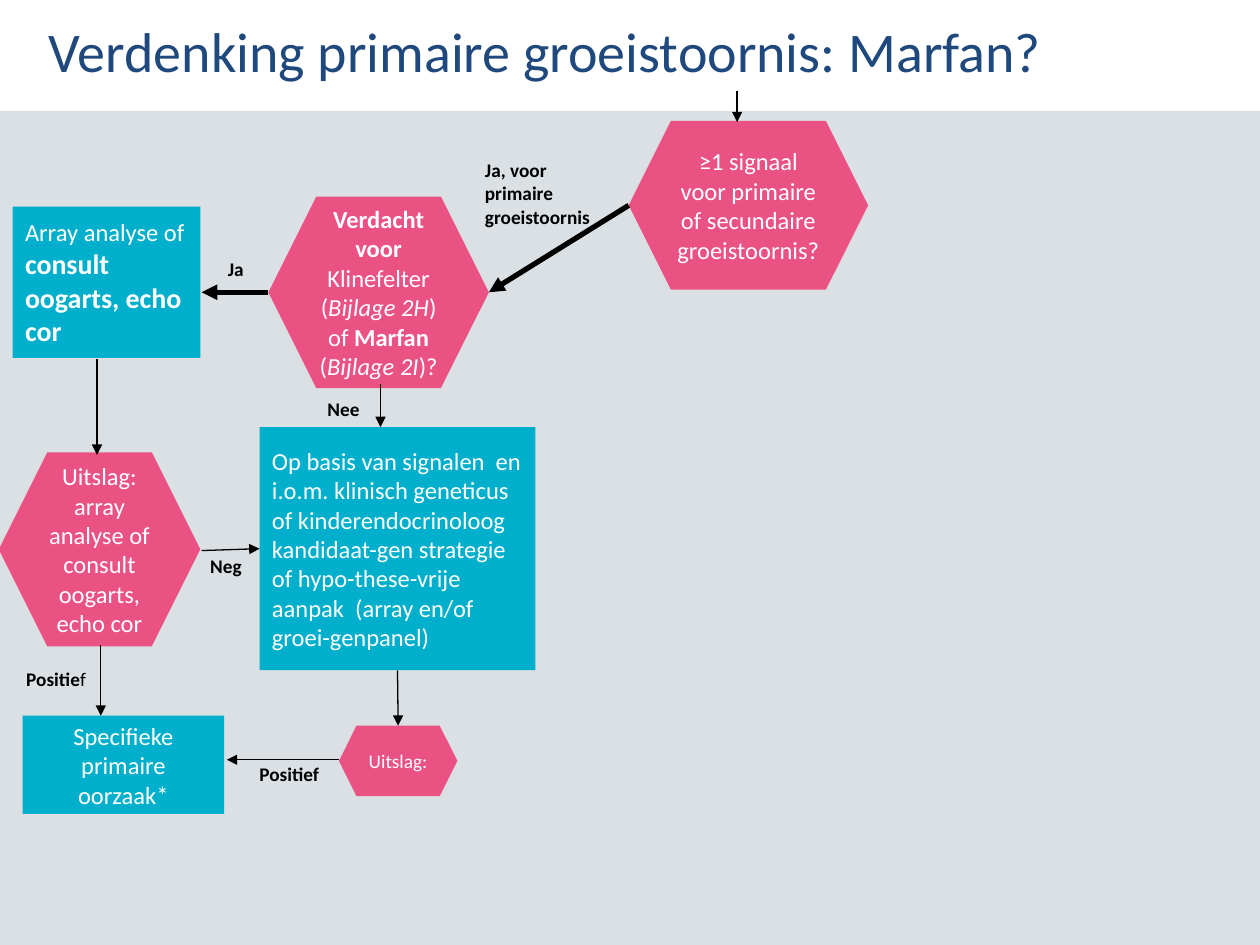
from lxml import etree
from pptx import Presentation
from pptx import util as u
from pptx.dml.color import RGBColor
from pptx.enum import shapes, text
from pptx.oxml.ns import qn

RECT = shapes.MSO_SHAPE.RECTANGLE
ROUND = shapes.MSO_SHAPE.ROUNDED_RECTANGLE
HEX = shapes.MSO_SHAPE.HEXAGON
LEFT, BOTTOM = 1, 2
PINK, CYAN, GREY = "EB5284", "00AFCB", "DAE0E3"
WHITE, BLACK, NAVY = "FFFFFF", "000000", "1F497D"


def rgb(value):
    return RGBColor.from_string(value)


class Flowchart:
    font = "Calibri"
    columns, rows = 100, 75

    def __init__(self, prs):
        self.cell_w = prs.slide_width / self.columns
        self.cell_h = prs.slide_height / self.rows
        self.s = prs.slides.add_slide(prs.slide_layouts[6])

    def place(self, *lengths):
        cells = (self.cell_w, self.cell_h) * 2
        return [u.Emu(round(n * cell)) for n, cell in zip(lengths, cells)]

    def set_text(self, sp, runs, size, color, bold=False, align=text.PP_ALIGN.LEFT):
        p = sp.text_frame.paragraphs[0]
        p.alignment = align
        p.font.name, p.font.size, p.font.bold = self.font, u.Pt(size), bold
        p.font.color.rgb = rgb(color)
        for content, style in [(runs, {})] if isinstance(runs, str) else runs:
            r = p.add_run()
            r.text = content
            r.font.bold = style.get("bold")
            r.font.italic = style.get("italic")
            r.font.size = style.get("size")

    def block(self, kind, at, fill, runs="", size=14, centred=True):
        sp = self.s.shapes.add_shape(kind, *self.place(*at))
        sp.shadow.inherit = False
        sp.fill.solid()
        sp.fill.fore_color.rgb = rgb(fill)
        sp.line.fill.background()
        if runs:
            align = text.PP_ALIGN.CENTER if centred else text.PP_ALIGN.LEFT
            sp.text_frame.vertical_anchor = text.MSO_ANCHOR.MIDDLE
            self.set_text(sp, runs, size, WHITE, align=align)
        return sp

    def label(self, at, runs, size=11, color=BLACK, bold=True, wrap=False):
        sp = self.s.shapes.add_textbox(*self.place(*at))
        sp.text_frame.word_wrap = wrap
        sp.text_frame.auto_size = text.MSO_AUTO_SIZE.SHAPE_TO_FIT_TEXT
        self.set_text(sp, runs, size, color, bold)

    def arrow(self, start, end, width=0.75, source=None, target=None):
        sp = self.s.shapes.add_connector(
            shapes.MSO_CONNECTOR.STRAIGHT, *self.place(*start, *end))
        sp.line.color.rgb = rgb(BLACK)
        sp.line.width = u.Pt(width)
        props = sp.element.find(qn("p:spPr"))
        etree.SubElement(props.find(qn("a:ln")), qn("a:tailEnd"), type="triangle")
        etree.SubElement(props, qn("a:effectLst"))
        if source:
            sp.begin_connect(*source)
        if target:
            sp.end_connect(*target)


def main():
    prs = Presentation()
    prs.slide_width, prs.slide_height = u.Inches(10), u.Inches(7.5)
    chart = Flowchart(prs)

    chart.block(RECT, (0, 8.8, 100, 66.2), GREY)
    chart.block(HEX, (49.9, 9.6, 19, 13.4), PINK,
                "≥1 signaal voor primaire of secundaire groeistoornis?")
    chart.block(HEX, (21.3, 15.6, 17.5, 15.2), PINK, [
        ("Verdacht voor ", {"bold": True}), ("Klinefelter (", {}),
        ("Bijlage 2H", {"italic": True}), (") of ", {}),
        ("Marfan ", {"bold": True}), ("(", {}),
        ("Bijlage 2I", {"italic": True}), (")?", {})])
    strategy = chart.block(
        RECT, (20.6, 33.9, 21.9, 19.3), CYAN,
        "Op basis van signalen  en i.o.m. klinisch geneticus of "
        "kinderendocrinoloog kandidaat-gen strategie of hypo-these-vrije "
        "aanpak  (array en/of groei-genpanel)", centred=False)
    array = chart.block(ROUND, (1, 16.4, 14.9, 12), CYAN, [
        ("Array analyse of ", {}),
        ("consult oogarts, echo cor", {"bold": True, "size": u.Pt(16)})], centred=False)
    array.adjustments[0] = 0
    chart.block(RECT, (1.8, 56.8, 16, 7.8), CYAN, "Specifieke primaire oorzaak*")
    chart.block(HEX, (-0.1, 35.9, 16, 15.4), PINK,
                "Uitslag: array analyse of consult oogarts, echo cor")
    chart.block(HEX, (26.9, 57.6, 9.4, 5.6), PINK, "Uitslag:", size=11)

    chart.arrow((58.5, 7.2), (58.5, 9.7))
    chart.arrow((49.9, 16.3), (38.8, 23.2), width=3)
    chart.arrow((21.3, 23.2), (16, 23.2), width=3)
    chart.arrow((30.2, 30.5), (30.2, 33.9))
    chart.arrow((7.7, 28.5), (7.7, 36.1))
    chart.arrow((16, 43.7), (20.6, 43.6), target=(strategy, LEFT))
    chart.arrow((31.6, 53.3), (31.6, 57.6), source=(strategy, BOTTOM))
    chart.arrow((8, 51.2), (8, 56.8))
    chart.arrow((26.9, 60.3), (18, 60.3))

    chart.label((37.5, 12.1, 11.2, 6.6), "Ja, voor primaire groeistoornis", wrap=True)
    chart.label((25, 31, 4.8, 2.8), "Nee", wrap=True)
    chart.label((17.1, 19.9, 4.5, 2.9), "Ja", wrap=True)
    chart.label((19.6, 60, 6.9, 2.9), "Positief")
    chart.label((15.7, 43.5, 4.5, 2.9), "Neg")
    chart.label((1.1, 52.5, 6.8, 2.9), [("Positie", {}), ("f", {"bold": False})])
    chart.label((2.9, 0.8, 81.6, 6.4), "Verdenking primaire groeistoornis: Marfan?",
                size=32, color=NAVY, bold=False)

    prs.save("out.pptx")


if __name__ == "__main__":
    main()
